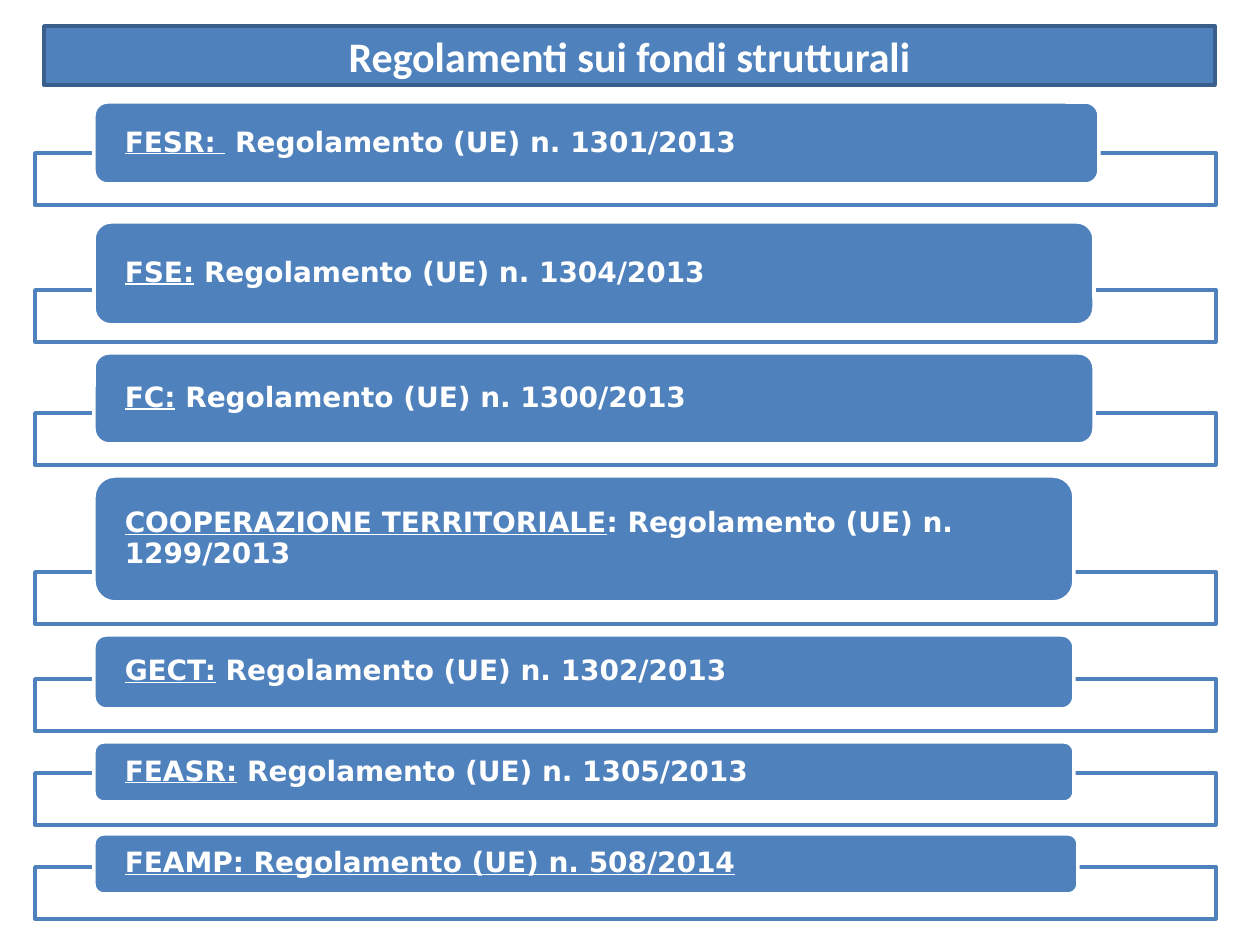
"""Build a slide listing the EU regulations on the structural funds."""
from lxml.etree import SubElement
from pptx import Presentation
from pptx.dml.color import RGBColor
from pptx.enum.shapes import MSO_SHAPE
from pptx.enum.text import MSO_ANCHOR, PP_ALIGN
from pptx.oxml.ns import qn
from pptx.util import Emu, Pt

THEME = {
    "blue": RGBColor.from_string("4F81BD"),
    "dark_blue": RGBColor.from_string("3A5F8C"),
    "white": RGBColor.from_string("FFFFFF"),
    "title_font": "Calibri",
    "title_size": Pt(24),
    "body_font": "DejaVu Sans",
    "body_size": Pt(16),
    "line_width": Pt(2),
}
EMU_PER_PX = 914400 / 126
BAR_LEFT, BAR_WIDTH, BAR_HEIGHT = 35, 1181, 52
BOX_LEFT, TEXT_INDENT = 94, 31
ROUND_CORNER_INSET = 0.05

FUNDS = [
    ("FESR: ", " Regolamento (UE) n. 1301/2013", 153, 102, 1005, 82),
    ("FSE:", " Regolamento (UE) n. 1304/2013", 290, 222, 1000, 103),
    ("FC:", " Regolamento (UE) n. 1300/2013", 413, 353, 1000, 91),
    ("COOPERAZIONE TERRITORIALE", ": Regolamento (UE) n. 1299/2013", 572, 476, 980, 126),
    ("GECT:", " Regolamento (UE) n. 1302/2013", 679, 635, 980, 74),
    ("FEASR:", " Regolamento (UE) n. 1305/2013", 773, 742, 980, 60),
    ("FEAMP: Regolamento (UE) n. 508/2014", "", 867, 834, 984, 60),
]


def px(length):
    return Emu(round(length * EMU_PER_PX))


def add_box(slide, kind, bounds, fill, line):
    shape = slide.shapes.add_shape(kind, *map(px, bounds))
    shape.shadow.inherit = False
    shape.fill.solid()
    shape.fill.fore_color.rgb = THEME[fill]
    shape.line.color.rgb = THEME[line]
    shape.line.width = THEME["line_width"]
    shape.text_frame.word_wrap = True
    shape.text_frame.vertical_anchor = MSO_ANCHOR.MIDDLE
    return shape


presentation = Presentation()
presentation.slide_width = px(1260)
presentation.slide_height = px(945)
slide = presentation.slides.add_slide(presentation.slide_layouts[6])

for label, regulation, bar_top, box_top, box_width, box_height in FUNDS:
    bar_bounds = (BAR_LEFT, bar_top, BAR_WIDTH, BAR_HEIGHT)
    bar = add_box(slide, MSO_SHAPE.RECTANGLE, bar_bounds, "white", "blue")
    bar_color = bar.fill._xPr.find(qn("a:solidFill"))[0]
    SubElement(bar_color, qn("a:alpha"), val="90000")

    box_bounds = (BOX_LEFT, box_top, box_width, box_height)
    box = add_box(slide, MSO_SHAPE.ROUNDED_RECTANGLE, box_bounds, "blue", "white")
    text_frame = box.text_frame
    inset = px(TEXT_INDENT - ROUND_CORNER_INSET * box_height)
    text_frame.margin_left = text_frame.margin_right = inset
    text_frame.margin_top = text_frame.margin_bottom = 0
    paragraph = text_frame.paragraphs[0]
    paragraph.alignment = PP_ALIGN.LEFT
    paragraph.line_spacing = 0.9
    paragraph.space_after = Pt(5.6)
    for text, underlined in ((label, True), (regulation, False)):
        if text:
            run = paragraph.add_run()
            run.text = text
            run.font.name = THEME["body_font"]
            run.font.size = THEME["body_size"]
            run.font.color.rgb = THEME["white"]
            run.font.bold = True
            run.font.underline = underlined

title = add_box(slide, MSO_SHAPE.RECTANGLE, (44, 26, 1171, 59), "blue", "dark_blue")
title.text_frame.text = "Regolamenti sui fondi strutturali"
paragraph = title.text_frame.paragraphs[0]
paragraph.alignment = PP_ALIGN.CENTER
font = paragraph.runs[0].font
font.name = THEME["title_font"]
font.size = THEME["title_size"]
font.color.rgb = THEME["white"]
font.bold = True

presentation.save("out.pptx")
